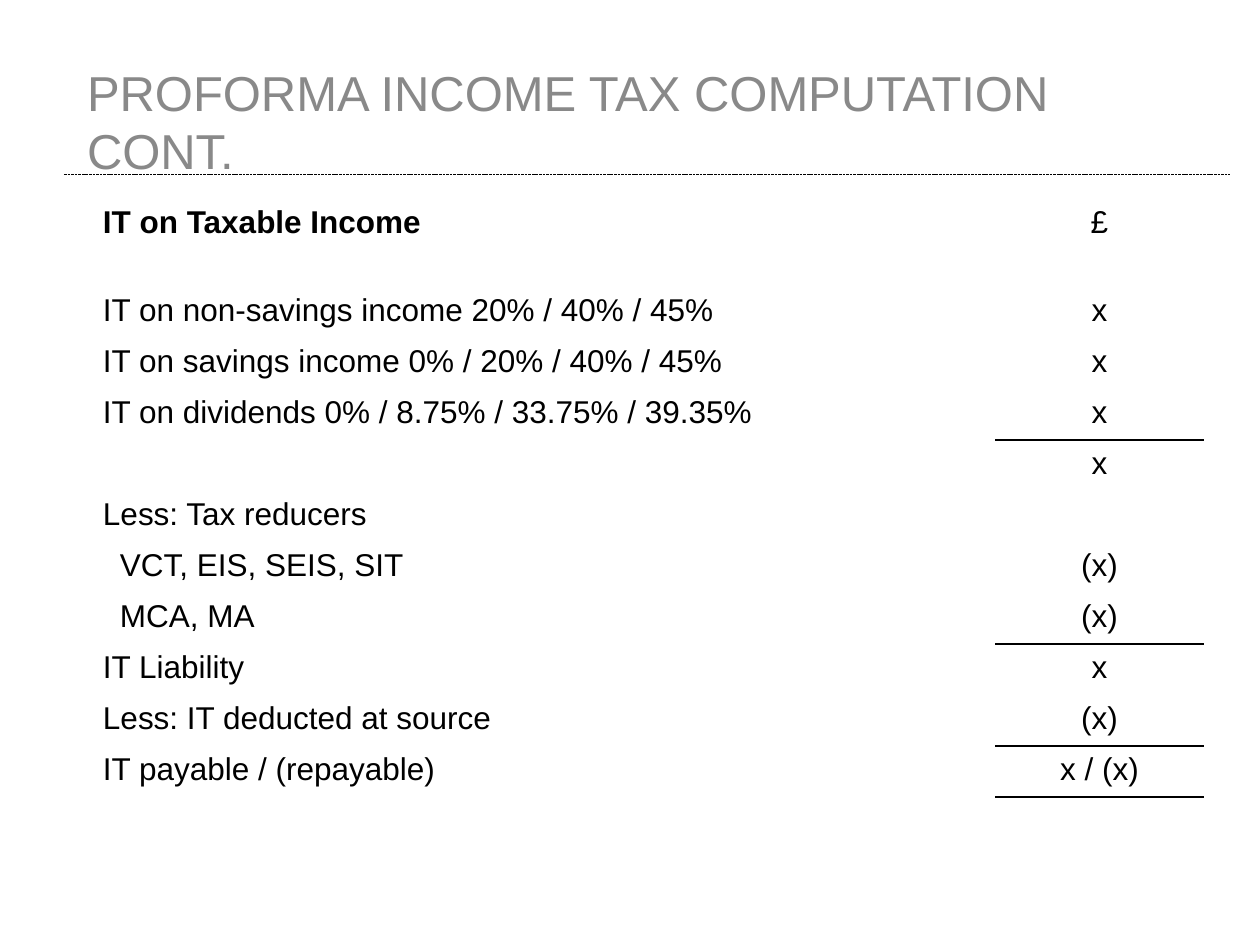
"""Build the proforma income tax computation slide."""
from dataclasses import dataclass

from pptx import Presentation
from pptx import util as u
from pptx.dml.color import RGBColor
from pptx.enum import dml, shapes, text
from pptx.oxml import parse_xml
from pptx.oxml.ns import nsdecls

PX = 914400 / 126
BLACK = "000000"
GREY = "898989"
FONT = "Arial"


@dataclass(frozen=True)
class Row:
    label: str
    amount: str
    height: int = 51
    indent: int = 0
    bold: bool = False
    ruled: bool = False


ROWS = [
    Row("IT on Taxable Income", "£", height=88, bold=True),
    Row("IT on non-savings income 20% / 40% / 45%", "x"),
    Row("IT on savings income 0% / 20% / 40% / 45%", "x"),
    Row("IT on dividends 0% / 8.75% / 33.75% / 39.35%", "x", ruled=True),
    Row("", "x"),
    Row("Less: Tax reducers", ""),
    Row("VCT, EIS, SEIS, SIT", "(x)", indent=17),
    Row("MCA, MA", "(x)", indent=17, ruled=True),
    Row("IT Liability", "x"),
    Row("Less: IT deducted at source", "(x)", ruled=True),
    Row("IT payable / (repayable)", "x / (x)", ruled=True),
]


def px(length: int) -> int:
    return round(length * PX)


def colour(value: str) -> RGBColor:
    return RGBColor.from_string(value)


def set_font(paragraph, size: int, value: str, bold: bool = False) -> None:
    font = paragraph.font
    font.name, font.size, font.bold = FONT, u.Pt(size), bold
    font.color.rgb = colour(value)


def add_title(slide, title: str) -> None:
    shape = slide.shapes.add_textbox(px(87), px(62), px(1116), px(110))
    frame = shape.text_frame
    frame.word_wrap = True
    frame.margin_left = frame.margin_right = 0
    frame.margin_top = frame.margin_bottom = 0
    paragraph = frame.paragraphs[0]
    paragraph.text = title
    set_font(paragraph, 28, GREY)


def add_divider(slide) -> None:
    line = slide.shapes.add_connector(
        shapes.MSO_CONNECTOR.STRAIGHT, px(64), px(174), px(1230), px(174))
    line.line.color.rgb = colour(BLACK)
    line.line.width = u.Pt(0.5)
    line.line.dash_style = dml.MSO_LINE.SQUARE_DOT
    line._element.spPr.append(parse_xml(f"<a:effectLst {nsdecls('a')}/>"))


def add_border(cell, side: str) -> None:
    border = parse_xml(
        f'<a:{side} {nsdecls("a")} w="{u.Pt(1)}"><a:solidFill>'
        f'<a:srgbClr val="{BLACK}"/></a:solidFill></a:{side}>')
    cell._tc.get_or_add_tcPr().insert(0, border)


def fill_cell(cell, content: str, align, indent: int = 0, bold: bool = False) -> None:
    cell.fill.background()
    cell.margin_left, cell.margin_right = px(16 + indent), px(16)
    cell.margin_top = cell.margin_bottom = px(6)
    paragraph = cell.text_frame.paragraphs[0]
    paragraph.text = content
    paragraph.alignment = align
    set_font(paragraph, 18, BLACK, bold)


def add_computation(slide, rows: list[Row]) -> None:
    height = sum(row.height for row in rows)
    table = slide.shapes.add_table(
        len(rows), 2, px(87), px(199), px(1116), px(height)).table
    table.first_row = table.horz_banding = False
    for column, width in zip(table.columns, (909, 207)):
        column.width = px(width)
    for index, row in enumerate(rows):
        table.rows[index].height = px(row.height)
        label, amount = table.cell(index, 0), table.cell(index, 1)
        fill_cell(label, row.label, text.PP_ALIGN.LEFT, row.indent, row.bold)
        fill_cell(amount, row.amount, text.PP_ALIGN.CENTER)
        if row.ruled:
            add_border(amount, "lnB")
        if index and rows[index - 1].ruled:
            add_border(amount, "lnT")


def main() -> None:
    presentation = Presentation()
    presentation.slide_width, presentation.slide_height = px(1260), px(945)
    slide = presentation.slides.add_slide(presentation.slide_layouts[6])
    add_divider(slide)
    add_title(slide, "PROFORMA INCOME TAX COMPUTATION CONT.")
    add_computation(slide, ROWS)
    presentation.save("out.pptx")


if __name__ == "__main__":
    main()
